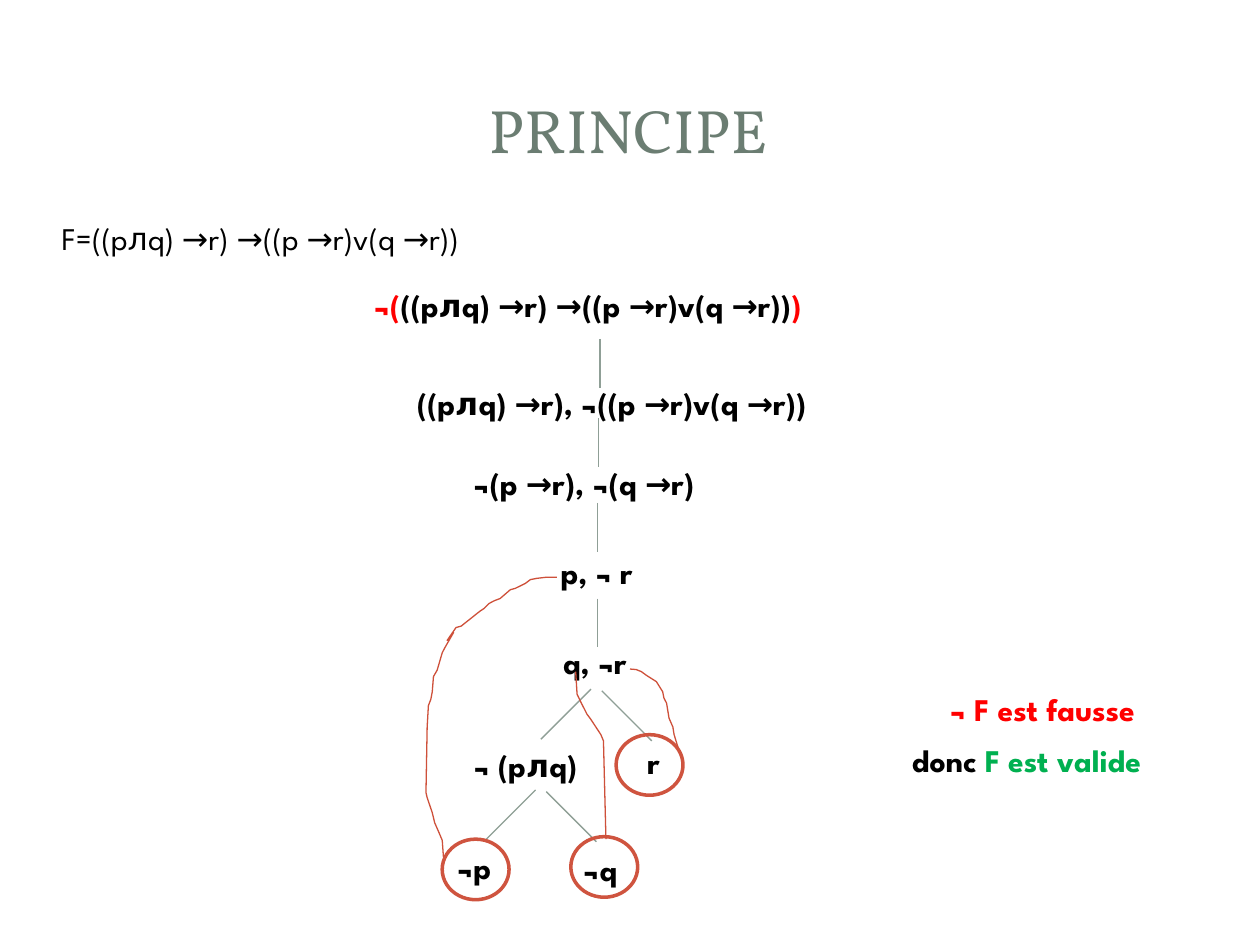
from dataclasses import dataclass
from lxml import etree
from pptx import Presentation
from pptx.dml.color import RGBColor as RGB
from pptx.enum.shapes import MSO_CONNECTOR as Connector, MSO_SHAPE as Shape
from pptx.enum.text import MSO_ANCHOR as Anchor, MSO_AUTO_SIZE as AutoSize, PP_ALIGN as Align
from pptx.oxml.ns import qn
from pptx.util import Pt


@dataclass(frozen=True)
class Theme:
    title_font: str = "Vollkorn"
    body_font: str = "League Spartan"
    title_size: float = 35
    body_size: float = 18
    title: RGB = RGB(0x6B, 0x7D, 0x72)
    ink: RGB = RGB(0, 0, 0)
    false: RGB = RGB(0xFF, 0, 0)
    valid: RGB = RGB(0, 0xB0, 0x50)
    branch: RGB = RGB(0x8F, 0x9F, 0x96)
    ring: RGB = RGB(0xCF, 0x54, 0x3F)
    link: RGB = RGB(0xCE, 0x50, 0x3A)
    thin: float = 0.75
    thick: float = 2


THEME = Theme()
LABEL_HEIGHT = 29
RING_SIZE = (38.2, 34.6)
FORMULA = "((pлq) →r) →((p →r)v(q →r))"

TREE_LABELS = [
    (231.1, 216, 258.5, "((pлq) →r), ¬((p →r)v(q →r))"),
    (263.5, 261.4, 155.5, "¬(p →r), ¬(q →r)"),
    (313.2, 312.5, 58.3, "p, ¬ r"),
    (314.6, 363.6, 53.3, "q, ¬r"),
    (263.5, 422.6, 78.5, "¬ (pлq)"),
    (362.9, 421.2, 20.2, "r"),
    (254.2, 481, 38.2, "¬p"),
    (326.2, 482.4, 38.2, "¬q"),
]
STEMS = [(342.8, 193.7), (342, 239), (341.3, 287.3), (341.3, 342)]
STEM_LENGTH = 28
FORKS = [(337.7, 393.8), (306, 451.4)]
FORK_REACH = 28.6
FORK_GAP = (6.2, 1)
RINGS = [(352.1, 419.8), (252.7, 479.5), (326.2, 478.1)]
LINKS = [
    [(387.4, 427), (385.2, 419.8), (384.5, 415.4), (382.3, 410.4),
     (381.6, 406.1), (380.9, 401.8), (379.4, 398.9), (378.7, 395.3),
     (375.1, 389.5), (369.4, 385.9), (366.5, 383.8), (363.5, 382.6),
     (360, 382.3)],
    [(253.4, 489.6), (252.7, 480.2), (250.6, 475.2), (248.4, 470.2),
     (247, 464.4), (244.1, 455.8), (243.4, 452.9), (244.1, 415.4),
     (244.8, 403.2), (246.2, 399.6), (247, 395.3), (247.7, 386.6),
     (249.8, 383), (250.6, 380.2), (252.7, 373), (254.2, 370.1),
     (259.2, 361.4), (255.5, 366), (260.6, 358.6), (263.5, 357.8),
     (274.3, 349.2), (276.5, 347.8), (279.4, 344.9), (282.2, 343.4),
     (285.8, 342), (291.6, 337), (294.5, 336.2), (300.2, 333.4),
     (303.1, 331.2), (306.7, 330.5), (312.5, 329.8), (318.2, 329.8)],
    [(346.3, 479.5), (344.9, 423.4), (343.4, 419.8), (337.7, 411.1),
     (335.5, 408.2), (334.1, 405.4), (332.6, 402.5), (329.8, 396.7),
     (329, 383.8)],
]


def format_run(run, font, size, color, bold=False):
    run.font.name = font
    run.font.size = Pt(size)
    run.font.color.rgb = color
    run.font.bold = bold


def add_title(slide, text):
    title = slide.shapes.title
    title.left, title.top, title.width, title.height = map(Pt, (33.8, 32.4, 650.2, 82.1))
    frame = title.text_frame
    frame.text = text
    frame.vertical_anchor = Anchor.MIDDLE
    heading = frame.paragraphs[0]
    heading.alignment = Align.CENTER
    format_run(heading.runs[0], THEME.title_font, THEME.title_size, THEME.title)


def add_label(slide, left, top, width, parts, bold=True):
    label = slide.shapes.add_textbox(Pt(left), Pt(top), Pt(width), Pt(LABEL_HEIGHT))
    frame = label.text_frame
    frame.word_wrap = False
    frame.auto_size = AutoSize.SHAPE_TO_FIT_TEXT
    for text, color in parts:
        run = frame.paragraphs[0].add_run()
        run.text = text
        format_run(run, THEME.body_font, THEME.body_size, color, bold)


def add_branch(slide, x1, y1, x2, y2):
    branch = slide.shapes.add_connector(Connector.STRAIGHT, Pt(x1), Pt(y1), Pt(x2), Pt(y2))
    branch.line.color.rgb = THEME.branch
    branch.line.width = Pt(THEME.thin)
    etree.SubElement(branch._element.spPr, qn("a:effectLst"))


def add_fork(slide, x, y):
    gap_x, gap_y = FORK_GAP
    add_branch(slide, x, y, x - FORK_REACH, y + FORK_REACH)
    right, top = x + gap_x, y + gap_y
    add_branch(slide, right, top, right + FORK_REACH, top + FORK_REACH)


def outline(shape, color, width):
    shape.shadow.inherit = False
    shape.fill.background()
    shape.line.color.rgb = color
    shape.line.width = Pt(width)


def add_ring(slide, left, top):
    ring = slide.shapes.add_shape(Shape.OVAL, Pt(left), Pt(top), *map(Pt, RING_SIZE))
    outline(ring, THEME.ring, THEME.thick)


def add_link(slide, points):
    start, *rest = [(Pt(x), Pt(y)) for x, y in points]
    builder = slide.shapes.build_freeform(*start)
    builder.add_line_segments(rest, close=False)
    outline(builder.convert_to_shape(), THEME.link, THEME.thin)


def main():
    deck = Presentation()
    deck.slide_width, deck.slide_height = Pt(720), Pt(540)
    slide = deck.slides.add_slide(deck.slide_layouts[5])
    add_title(slide, "PRINCIPE")

    add_label(slide, 206.6, 159.8, 284.4,
              [("¬(", THEME.false), (FORMULA, THEME.ink), (")", THEME.false)])
    for x, y in STEMS:
        add_branch(slide, x, y, x, y + STEM_LENGTH)
    for x, y in FORKS:
        add_fork(slide, x, y)
    for left, top, width, text in TREE_LABELS:
        add_label(slide, left, top, width, [(text, THEME.ink)])
    for left, top in RINGS:
        add_ring(slide, left, top)
    for points in LINKS:
        add_link(slide, points)

    add_label(slide, 535.7, 391, 129.6, [("¬ F est fausse", THEME.false)])
    add_label(slide, 514.1, 419.8, 164.2,
              [("donc", THEME.ink), (" F est valide", THEME.valid)])
    add_label(slide, 28.1, 121.7, 280.1, [("F=" + FORMULA, THEME.ink)], bold=False)
    deck.save("out.pptx")


if __name__ == "__main__":
    main()
